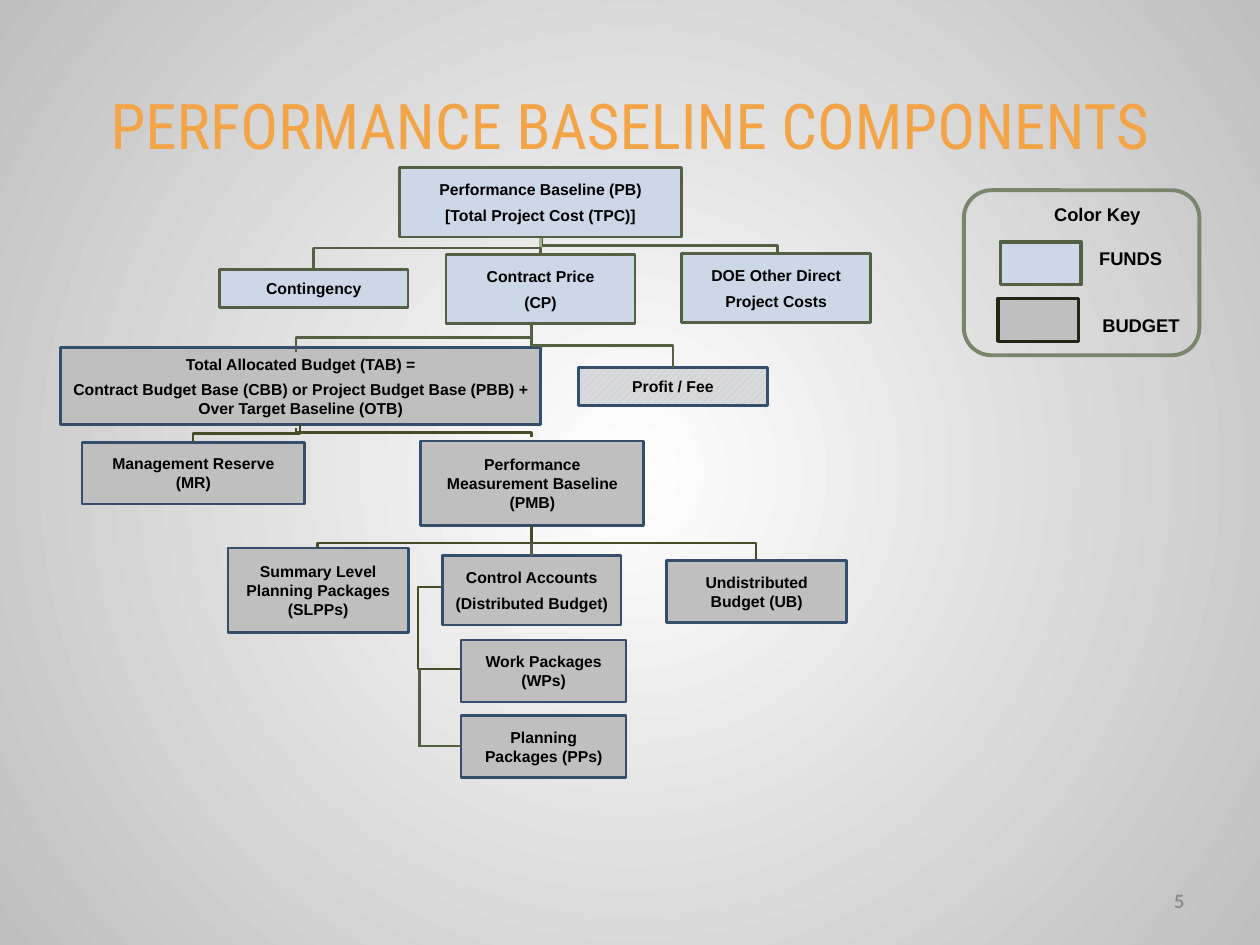
from lxml import etree
from pptx import Presentation
from pptx.dml.color import RGBColor
from pptx.enum.dml import MSO_PATTERN
from pptx.enum.shapes import MSO_CONNECTOR, MSO_SHAPE
from pptx.enum.text import MSO_ANCHOR, PP_ALIGN
from pptx.oxml import parse_xml
from pptx.oxml.ns import qn
from pptx.util import Pt

RECT, ROUNDED = MSO_SHAPE.RECTANGLE, MSO_SHAPE.ROUNDED_RECTANGLE
STRAIGHT, ELBOW = MSO_CONNECTOR.STRAIGHT, MSO_CONNECTOR.ELBOW
CENTER, RIGHT = PP_ALIGN.CENTER, PP_ALIGN.RIGHT
TOP, MIDDLE = MSO_ANCHOR.TOP, MSO_ANCHOR.MIDDLE
HATCH = MSO_PATTERN.WIDE_UPWARD_DIAGONAL
FUNDS, BUDGET, FEE = "CCD8E7", "BFBFBF", "hatched"
GREEN, NAVY, OLIVE = "536142", "344E6D", "444D26"


def rgb(value):
    return RGBColor.from_string(value)


def connect(kind, x1, y1, x2, y2, color):
    link = slide.shapes.add_connector(kind, Pt(x1), Pt(y1), Pt(x2), Pt(y2))
    link.line.color.rgb = rgb(color)
    link.line.width = Pt(1.5)
    etree.SubElement(link._element.spPr, qn("a:effectLst"))
    return link._element.spPr


prs = Presentation()
prs.slide_width, prs.slide_height = Pt(720), Pt(540)
slide = prs.slides.add_slide(prs.slide_layouts[6])

slide.background.fill.solid()
solid = slide._element.find(".//" + qn("a:solidFill"))
solid.getparent().replace(solid, parse_xml(
    '<a:gradFill xmlns:a="http://schemas.openxmlformats.org/drawingml/2006/main" rotWithShape="1">'
    '<a:gsLst><a:gs pos="0"><a:srgbClr val="FFFFFF"/></a:gs>'
    '<a:gs pos="100000"><a:srgbClr val="BFBFBF"/></a:gs></a:gsLst>'
    '<a:path path="circle"><a:fillToRect l="50000" t="50000" r="50000" b="50000"/></a:path>'
    '</a:gradFill>'))

bracket = connect(ELBOW, 257, 335.5, 267.8, 382.3, OLIVE)
guides = bracket.find(qn("a:prstGeom")).get_or_add_avLst()
etree.SubElement(guides, qn("a:gd"), name="adj1", fmla="val -168800")

boxes = [
    (ROUNDED, 550.8, 108.7, 134.6, 94.3, None, "7A866C", 2.25, []),
    (RECT, 571.7, 138.2, 46.1, 24.5, FUNDS, GREEN, 2, []),
    (RECT, 570.2, 170.6, 46.1, 24.5, BUDGET, "222613", 2, []),
    (RECT, 228.2, 95.8, 161.3, 39.6, FUNDS, GREEN, 1.5,
     ["Performance Baseline (PB)", "[Total Project Cost (TPC)]"]),
    (RECT, 125.3, 154.1, 108, 21.6, FUNDS, GREEN, 1.5, ["Contingency"]),
    (RECT, 254.9, 145.4, 108, 39.6, FUNDS, GREEN, 1.5, ["Contract Price", "(CP)"]),
    (RECT, 389.5, 144.7, 108, 39.6, FUNDS, GREEN, 1.5, ["DOE Other Direct", "Project Costs"]),
    (RECT, 34.6, 198.7, 274.3, 43.9, BUDGET, NAVY, 1.5,
     ["Total Allocated Budget (TAB) =",
      "Contract Budget Base (CBB) or Project Budget Base (PBB) + Over Target Baseline (OTB)"]),
    (RECT, 330.5, 210.2, 108, 21.6, FEE, NAVY, 1.5, ["Profit / Fee"]),
    (RECT, 46.8, 252.7, 127.4, 35.3, BUDGET, NAVY, 1.5, ["Management Reserve (MR)"]),
    (RECT, 240.5, 252, 127.4, 48.2, BUDGET, NAVY, 1.5, ["Performance Measurement Baseline (PMB)"]),
    (RECT, 130.3, 313.2, 103, 48.2, BUDGET, NAVY, 1.5, ["Summary Level Planning Packages (SLPPs)"]),
    (RECT, 252.7, 317.5, 102.2, 39.6, BUDGET, NAVY, 1.5, ["Control Accounts", "(Distributed Budget)"]),
    (RECT, 380.9, 320.4, 103, 35.3, BUDGET, NAVY, 1.5, ["Undistributed Budget (UB)"]),
    (RECT, 263.5, 365.8, 94.3, 35.3, BUDGET, NAVY, 1.5, ["Work Packages (WPs)"]),
    (RECT, 263.5, 409, 94.3, 35.3, BUDGET, NAVY, 1.5, ["Planning Packages (PPs)"]),
]
for outline, x, y, w, h, fill, border, weight, lines in boxes:
    box = slide.shapes.add_shape(outline, Pt(x), Pt(y), Pt(w), Pt(h))
    box.shadow.inherit = False
    box.line.color.rgb = rgb(border)
    box.line.width = Pt(weight)
    if fill is None:
        box.fill.background()
    elif fill == FEE:
        box.fill.patterned()
        box.fill.pattern = HATCH
        box.fill.fore_color.rgb = rgb("B3C5DA")
        box.fill.back_color.rgb = rgb("D9D9D9")
    else:
        box.fill.solid()
        box.fill.fore_color.rgb = rgb(fill)
    frame = box.text_frame
    frame.word_wrap = True
    frame.vertical_anchor = MIDDLE
    frame.margin_left = frame.margin_right = Pt(6.8)
    frame.text = "\n".join(lines)
    for para in frame.paragraphs if lines else []:
        para.alignment = CENTER
        para.space_after = Pt(3.8)
        para.font.name, para.font.size, para.font.bold = "Arial", Pt(9), True
        para.font.color.rgb = rgb("000000")

for x1, y1, x2, y2, color in [
    (309.6, 136.1, 444.2, 144.7, GREEN),
    (303.8, 185, 169.2, 200.9, GREEN),
    (303.8, 185, 384.5, 210.2, GREEN),
    (171.4, 242.6, 110.2, 252.7, OLIVE),
    (169.2, 244.8, 303.8, 249.8, OLIVE),
    (303.8, 307.4, 181.4, 313.2, OLIVE),
    (303.8, 300.2, 432, 320.4, OLIVE),
]:
    mid_x, mid_y = (x1 + x2) / 2, (y1 + y2) / 2
    half_drop, half_span = (y2 - y1) / 2, abs(x2 - x1) / 2
    side = 1 if x2 < x1 else -1
    branch = connect(ELBOW, mid_x - side * half_drop, mid_y - half_span,
                     mid_x + side * half_drop, mid_y + half_span, color)
    branch.find(qn("a:xfrm")).set("rot", "5400000" if side == 1 else "16200000")

for x1, y1, x2, y2, color in [
    (308.9, 136.1, 308.9, 145.4, "A1B28E"),
    (239.8, 382.3, 239.8, 426.2, GREEN),
    (239, 426.2, 263.5, 426.2, GREEN),
    (303.8, 310.3, 303.8, 317.5, GREEN),
    (308.9, 141.8, 308.9, 145.4, GREEN),
]:
    connect(STRAIGHT, x1, y1, x2, y2, color)

contingency_branch = connect(ELBOW, 309.6, 141.8, 179.3, 154.1, GREEN)
contingency_branch.find(qn("a:prstGeom")).set("prst", "bentConnector2")

labels = [
    (49.7, 31.7, 620.6, 78.5, MIDDLE, "Roboto Condensed", 36, False, "F3A447",
     [("PERFORMANCE BASELINE COMPONENTS", CENTER, 0, 0)]),
    (573.1, 112.3, 108, 85.7, TOP, "Arial", 10.5, True, "000000",
     [("Color Key", CENTER, 0, 0), ("FUNDS", CENTER, 13, 38), ("BUDGET", RIGHT, 25.5, 0)]),
    (516.2, 500.4, 167.8, 28.8, MIDDLE, "Lato", 10.5, True, "8C8C8C", [("5", RIGHT, 0, 0)]),
]
for x, y, w, h, anchor, face, size, bold, color, lines in labels:
    frame = slide.shapes.add_textbox(Pt(x), Pt(y), Pt(w), Pt(h)).text_frame
    frame.word_wrap = True
    frame.vertical_anchor = anchor
    frame.text = "\n".join(line[0] for line in lines)
    for para, (_, align, gap, indent) in zip(frame.paragraphs, lines):
        para.alignment = align
        para.space_before = Pt(gap)
        para.font.name, para.font.size, para.font.bold = face, Pt(size), bold
        para.font.color.rgb = rgb(color)
        if indent:
            para._p.get_or_add_pPr().set("marL", str(Pt(indent)))

prs.save("out.pptx")
